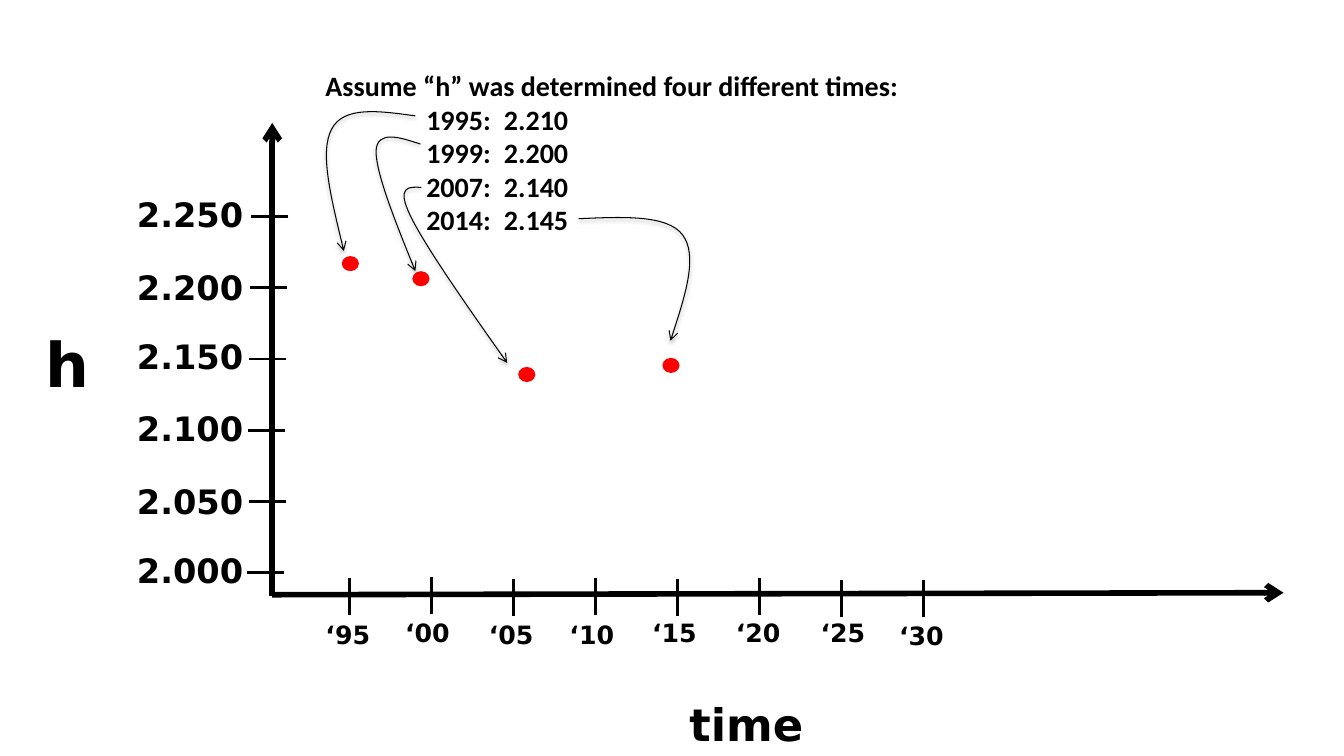
import dataclasses

import pptx
import pptx.dml.color
import pptx.enum.shapes
import pptx.enum.text
import pptx.oxml
import pptx.oxml.ns
import pptx.util

Inches = pptx.util.Inches
Pt = pptx.util.Pt
RGB = pptx.dml.color.RGBColor


@dataclasses.dataclass(frozen=True)
class Theme:
    ink: RGB = RGB(0, 0, 0)
    dot: RGB = RGB(255, 0, 0)
    face: str = "DejaVu Sans"
    note: str = "Calibri"
    year: int = 18
    body: int = 20
    value: int = 24
    time: int = 32
    height: int = 44
    axis: float = 4
    tick: float = 2
    curve: float = 0.75


THEME = Theme()

LEVEL_GAP = 3.53 / 5
YEAR_GAP = 5.69 / 7
LEVELS = [
    ("2.250", 2.49, 1.87),
    ("2.200", 2.48, 2.6),
    ("2.150", 2.47, 3.28),
    ("2.100", 2.46, 4),
    ("2.050", 2.47, 4.72),
    ("2.000", 2.45, 5.41),
]
YEARS = [
    ("‘95", 5.73, 3.13, 6.09),
    ("‘00", 5.72, 3.92, 6.08),
    ("‘05", 5.74, 4.75, 6.09),
    ("‘10", 5.73, 5.55, 6.09),
    ("‘15", 5.74, 6.37, 6.08),
    ("‘20", 5.73, 7.2, 6.08),
    ("‘25", 5.75, 8.04, 6.08),
    ("‘30", 5.75, 8.82, 6.1),
]
NOTES = [
    "Assume “h” was determined four different times:",
    "\t1995:\t2.210",
    "\t1999:\t2.200",
    "\t2007:\t2.140",
    "\t2014:\t2.145",
]
DOTS = [(3.39, 2.54), (4.09, 2.69), (5.14, 3.64), (6.57, 3.55)]
CURVES = [
    ((3.24, 1.11, 0.88, 1.38),
     [(4.12, 1.15), (3.76, 1.1), (3.41, 1.05), (3.29, 1.28),
      (3.17, 1.5), (3.29, 1.99), (3.41, 2.49)]),
    ((3.73, 1.36, 0.43, 1.33),
     [(4.17, 1.43), (3.96, 1.36), (3.74, 1.29), (3.73, 1.5),
      (3.73, 1.71), (3.92, 2.2), (4.12, 2.69)]),
    ((5.74, 2.16, 1.1, 1.22),
     [(5.74, 2.17), (6.18, 2.15), (6.62, 2.13), (6.77, 2.33),
      (6.92, 2.53), (6.79, 2.96), (6.65, 3.38)]),
    ((4.01, 1.86, 1.02, 1.74),
     [(4.18, 1.86), (4.05, 1.85), (3.93, 1.85), (4.07, 2.14),
      (4.21, 2.43), (4.62, 3.02), (5.03, 3.6)]),
]


def add_xml(parent, tag, **attrs):
    node = pptx.oxml.parse_xml(f"<a:{tag} {pptx.oxml.ns.nsdecls('a')}/>")
    for name, value in attrs.items():
        node.set(name, str(value))
    parent.append(node)
    return node


def style_line(line, width, arrow):
    line.color.rgb = THEME.ink
    line.width = Pt(width)
    if arrow:
        add_xml(line._get_or_add_ln(), "tailEnd", type="arrow")


def add_line(shapes, start, end, width, arrow=False):
    kind = pptx.enum.shapes.MSO_CONNECTOR.STRAIGHT
    ends = [Inches(n) for n in (*start, *end)]
    line = shapes.add_connector(kind, *ends)
    style_line(line.line, width, arrow)
    add_xml(line._element.spPr, "effectLst")


def add_text(shapes, box, lines, size, face=THEME.face, tabs=()):
    frame = shapes.add_textbox(*[Inches(n) for n in box]).text_frame
    frame.word_wrap = False
    frame.auto_size = pptx.enum.text.MSO_AUTO_SIZE.SHAPE_TO_FIT_TEXT
    frame.text = "\n".join(lines)
    for para in frame.paragraphs:
        if tabs and "\t" in para.text:
            stops = add_xml(para._p.get_or_add_pPr(), "tabLst")
            for stop in tabs:
                add_xml(stops, "tab", pos=Inches(stop), algn="l")
        para.font.name = face
        para.font.size = Pt(size)
        para.font.bold = True
        para.font.color.rgb = THEME.ink


def add_dot(shapes, left, top):
    oval = pptx.enum.shapes.MSO_SHAPE.OVAL
    dot = shapes.add_shape(oval, Inches(left), Inches(top), Inches(0.17), Inches(0.15))
    dot.shadow.inherit = False
    dot.fill.solid()
    dot.fill.fore_color.rgb = THEME.dot
    dot.line.fill.background()


def bend(curve, left, top, knots):
    track = next(curve._element.iter(pptx.oxml.ns.qn("a:path")))
    track.set("fill", "none")
    for node in list(track):
        track.remove(node)
    parts = [("moveTo", knots[:1])]
    parts += [("cubicBezTo", knots[i:i + 3]) for i in range(1, len(knots), 3)]
    for tag, points in parts:
        node = add_xml(track, tag)
        for x, y in points:
            add_xml(node, "pt", x=Inches(x - left), y=Inches(y - top))


def add_curve(shapes, box, knots):
    left, top, width, height = box
    outline = shapes.build_freeform(Inches(left), Inches(top))
    corner = (Inches(left + width), Inches(top + height))
    outline.add_line_segments([corner], close=False)
    curve = outline.convert_to_shape()
    bend(curve, left, top, knots)
    curve.fill.background()
    style_line(curve.line, THEME.curve, True)
    curve.shadow.inherit = False
    effects = curve._element.spPr.find(pptx.oxml.ns.qn("a:effectLst"))
    shade = add_xml(effects, "outerShdw", blurRad=Pt(3.1), dist=Pt(1.8),
                    dir=5400000, rotWithShape=0)
    color = add_xml(shade, "srgbClr", val=THEME.ink)
    add_xml(color, "alpha", val=35000)


def add_levels(shapes):
    for i, (level, left, top) in enumerate(LEVELS):
        y = 2.15 + LEVEL_GAP * i
        add_line(shapes, (left + 0.37, y), (left, y), THEME.tick)
        add_text(shapes, (1.26, top, 1.28, 0.5), [level], THEME.value)


def add_years(shapes):
    for i, (year, high, left, top) in enumerate(YEARS):
        x = 3.47 + YEAR_GAP * i
        add_line(shapes, (x, high), (x, high + 0.37), THEME.tick)
        add_text(shapes, (left, top, 0.64, 0.4), [year], THEME.year)


def main():
    deck = pptx.Presentation()
    deck.slide_width = Inches(13.33)
    deck.slide_height = Inches(7.5)
    shapes = deck.slides.add_slide(deck.slide_layouts[6]).shapes

    add_line(shapes, (2.7, 5.91), (2.7, 1.22), THEME.axis, True)
    add_line(shapes, (2.7, 5.9), (12.73, 5.88), THEME.axis, True)
    add_levels(shapes)
    add_text(shapes, (0.35, 3.18, 0.64, 0.84), ["h"], THEME.height)
    add_text(shapes, (6.74, 6.86, 1.33, 0.64), ["time"], THEME.time)
    for spot in DOTS:
        add_dot(shapes, *spot)
    add_text(shapes, (3.13, 0.63, 5.94, 1.78), NOTES, THEME.body,
             THEME.note, (1, 1.77))
    add_years(shapes.add_group_shape().shapes)
    for box, knots in CURVES:
        add_curve(shapes, box, knots)

    deck.save("out.pptx")


if __name__ == "__main__":
    main()
